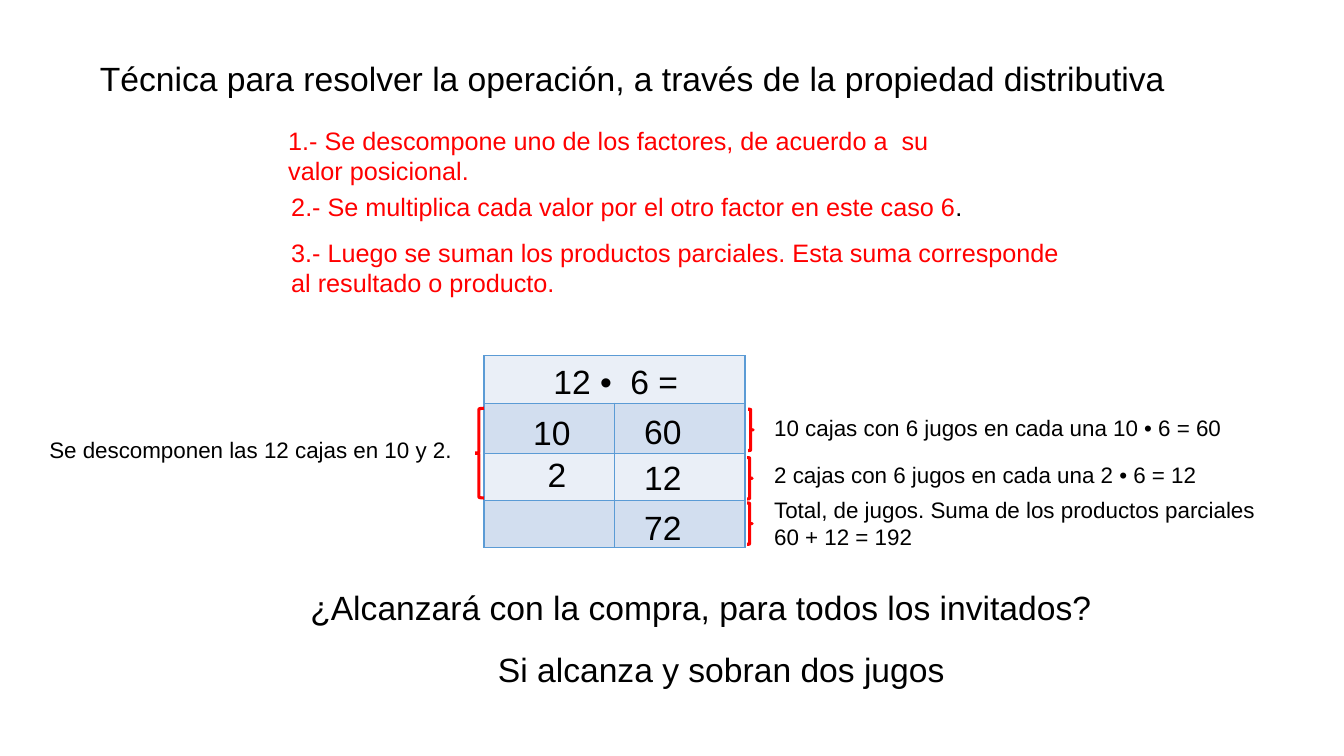
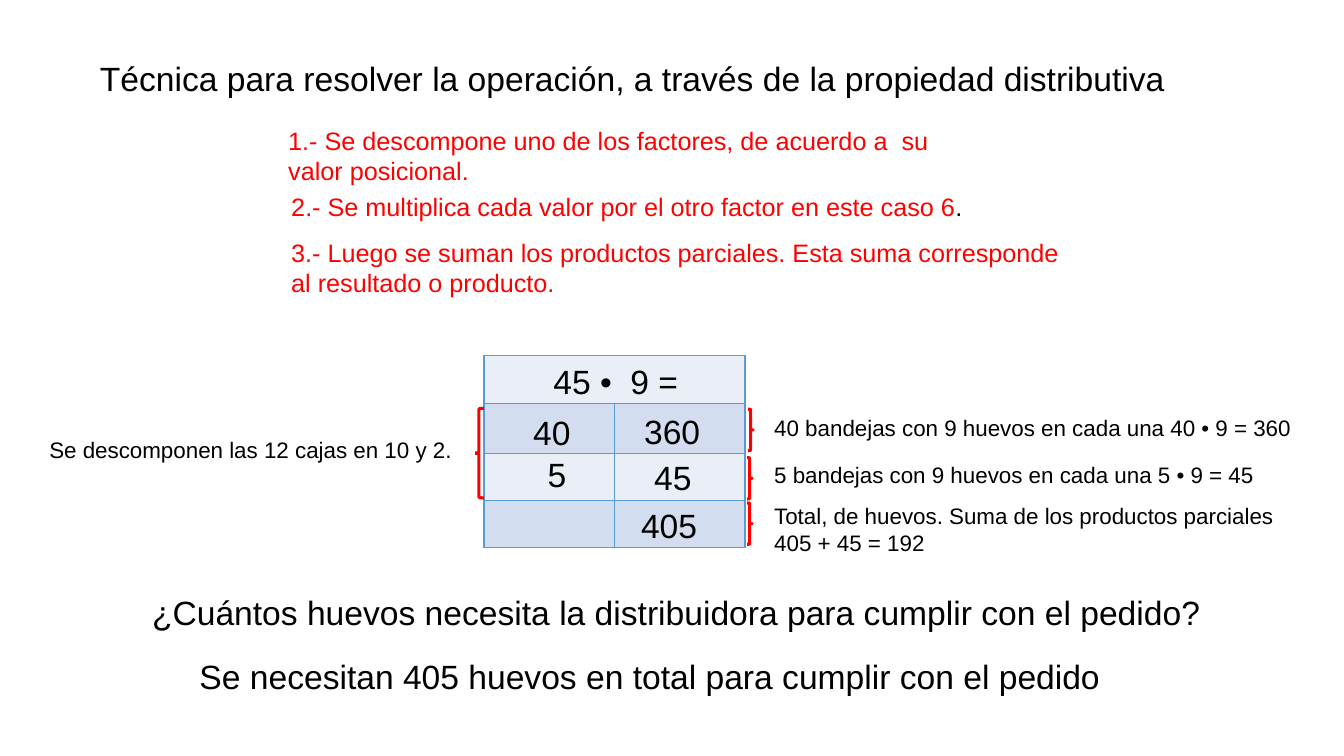
"""Two slides that solve a multiplication with the distributive property."""
from lxml import etree
from pptx import Presentation
from pptx.dml.color import RGBColor
from pptx.enum.shapes import MSO_SHAPE
from pptx.enum.text import MSO_ANCHOR, MSO_AUTO_SIZE, PP_ALIGN
from pptx.oxml.ns import qn
from pptx.util import Inches, Pt

RECTANGLE, BRACE = MSO_SHAPE.RECTANGLE, MSO_SHAPE.RIGHT_BRACE
TOP, FIXED = MSO_ANCHOR.TOP, MSO_AUTO_SIZE.NONE
LEFT, CENTER = PP_ALIGN.LEFT, PP_ALIGN.CENTER

FONT = "Arial"
COLORS = {"text": "000000", "accent": "FF0000", "paper": "FFFFFF",
          "light": "EAEFF7", "band": "D2DEEF", "border": "5B9BD5"}

TITLE = "Técnica para resolver la operación, a través de la propiedad distributiva"
TITLE_AREA = (0.89, 0.52, 11, 0.5)
STEPS = [
    ([("1.- Se descompone uno de los factores, de acuerdo a  su valor posicional.", "accent")],
     (2.76, 1.19, 7.08, 0.71)),
    ([("2.- Se multiplica cada valor por el otro factor en este caso 6", "accent"),
      (".", "text")], (2.79, 1.85, 6.91, 0.4)),
    ([("3.- Luego se suman los productos parciales. "
       "Esta suma corresponde al resultado o producto.", "accent")],
     (2.79, 2.3, 7.96, 0.71)),
]
SPLIT_NOTE = (["Se descomponen las 12 cajas en 10 y 2."], (0.39, 4.28, 4.32, 0.44))

TABLE_AREA = (4.8, 3.53, 2.59, 1.9)
ROW_HEIGHTS = [0.47, 0.5, 0.47, 0.46]

BRACES = [((left, top, 0.05, 0.41), 0)
          for left, top in ((7.42, 4.06), (7.41, 4.54), (7.41, 4.99))]
BRACES.append(((4.7, 4.05, 0.1, 0.89), 180))

SLIDES = [
    {
        "numbers": [
            ("12 •  6 =", (5.39, 3.53, 1.6, 0.5), LEFT),
            ("10", (5.19, 4.04, 0.66, 0.5), LEFT),
            ("2", (5.31, 4.45, 0.43, 0.5), CENTER),
            ("60", (6.29, 4.03, 0.57, 0.5), LEFT),
            ("12", (6.29, 4.48, 0.66, 0.5), LEFT),
            ("72", (6.29, 4.98, 0.66, 0.5), LEFT),
        ],
        "notes": [
            (["10 cajas con 6 jugos en cada una 10 • 6 = 60"], (7.58, 4.06, 5.15, 0.36)),
            (["2 cajas con 6 jugos en cada una 2 • 6 = 12"], (7.58, 4.53, 5.15, 0.36)),
            (["Total, de jugos. Suma de los productos parciales", "60 + 12 = 192"],
             (7.58, 4.87, 5.42, 0.71)),
        ],
        "closing": [
            ("¿Alcanzará con la compra, para todos los invitados?",
             (2.98, 5.77, 8.03, 0.5), LEFT),
            ("Si alcanza y sobran dos jugos", (4.84, 6.39, 5.09, 0.5), LEFT),
        ],
    },
    {
        "numbers": [
            ("45 •  9 =", (5.39, 3.53, 1.6, 0.5), LEFT),
            ("40", (5.19, 4.04, 0.66, 0.5), LEFT),
            ("5", (5.31, 4.45, 0.43, 0.5), CENTER),
            ("360", (6.29, 4.03, 0.81, 0.5), LEFT),
            ("45", (6.39, 4.48, 0.66, 0.5), LEFT),
            ("405", (6.26, 4.96, 0.84, 0.5), LEFT),
        ],
        "notes": [
            (["40 bandejas con 9 huevos en cada una 40 • 9 = 360"], (7.58, 4.06, 5.42, 0.36)),
            (["5 bandejas con 9 huevos en cada una 5 • 9 = 45"], (7.58, 4.53, 5.15, 0.36)),
            (["Total, de huevos. Suma de los productos parciales", "405 + 45 = 192"],
             (7.58, 4.93, 5.42, 0.71)),
        ],
        "closing": [
            ("¿Cuántos huevos necesita la distribuidora para cumplir con el pedido?",
             (1.41, 5.82, 11.27, 0.5), LEFT),
            ("Se necesitan 405 huevos en total para cumplir con el pedido",
             (1.88, 6.46, 9.58, 0.5), LEFT),
        ],
    },
]


def color(name):
    return RGBColor.from_string(COLORS[name])


def area(lengths):
    return [Inches(length) for length in lengths]


def write(frame, lines, size, alignment=LEFT):
    frame.word_wrap, frame.auto_size, frame.vertical_anchor = True, FIXED, TOP
    for index, spans in enumerate(lines):
        para = frame.add_paragraph() if index else frame.paragraphs[0]
        para.alignment = alignment
        for text, color_name in spans:
            span = para.add_run()
            span.text = text
            span.font.name, span.font.size = FONT, Pt(size)
            span.font.color.rgb = color(color_name)


def add_text(page, spans, lengths, size, alignment=LEFT):
    box = page.shapes.add_textbox(*area(lengths))
    write(box.text_frame, [spans], size, alignment)


def add_title(page):
    title = page.shapes.title
    title.left, title.top, title.width, title.height = area(TITLE_AREA)
    write(title.text_frame, [[(TITLE, "text")]], 24)


def add_borders(cell):
    properties = cell._tc.get_or_add_tcPr()
    for side in ("lnL", "lnR", "lnT", "lnB"):
        line = etree.SubElement(properties, qn("a:" + side), w=str(Pt(1)))
        fill = etree.SubElement(line, qn("a:solidFill"))
        etree.SubElement(fill, qn("a:srgbClr"), val=COLORS["border"])


def add_product_table(page):
    table = page.shapes.add_table(len(ROW_HEIGHTS), 2, *area(TABLE_AREA)).table
    table.first_row = table.horz_banding = False
    for row, height in enumerate(ROW_HEIGHTS):
        table.rows[row].height = Inches(height)
        for cell in table.rows[row].cells:
            add_borders(cell)
            cell.fill.solid()
            cell.fill.fore_color.rgb = color("band" if row % 2 else "light")
    table.cell(0, 0).merge(table.cell(0, 1))


def add_brace(page, lengths, rotation):
    brace = page.shapes.add_shape(BRACE, *area(lengths))
    brace.rotation = rotation
    brace.shadow.inherit = False
    brace.fill.background()
    brace.line.color.rgb = color("accent")
    brace.line.width = Pt(2.25)


def add_note(page, lines, lengths):
    note = page.shapes.add_shape(RECTANGLE, *area(lengths))
    note.shadow.inherit = False
    note.fill.solid()
    note.fill.fore_color.rgb = color("paper")
    note.line.fill.background()
    write(note.text_frame, [[(line, "text")] for line in lines], 16)


def add_slide(deck, content):
    page = deck.slides.add_slide(deck.slide_layouts[5])
    add_title(page)
    add_product_table(page)
    for lengths, rotation in BRACES:
        add_brace(page, lengths, rotation)
    for spans, lengths in STEPS:
        add_text(page, spans, lengths, 18)
    for lines, lengths in [SPLIT_NOTE] + content["notes"]:
        add_note(page, lines, lengths)
    for text, lengths, alignment in content["numbers"] + content["closing"]:
        add_text(page, [(text, "text")], lengths, 24, alignment)


def main():
    deck = Presentation()
    deck.slide_width, deck.slide_height = Inches(13.33), Inches(7.5)
    for content in SLIDES:
        add_slide(deck, content)
    deck.save("out.pptx")


if __name__ == "__main__":
    main()
